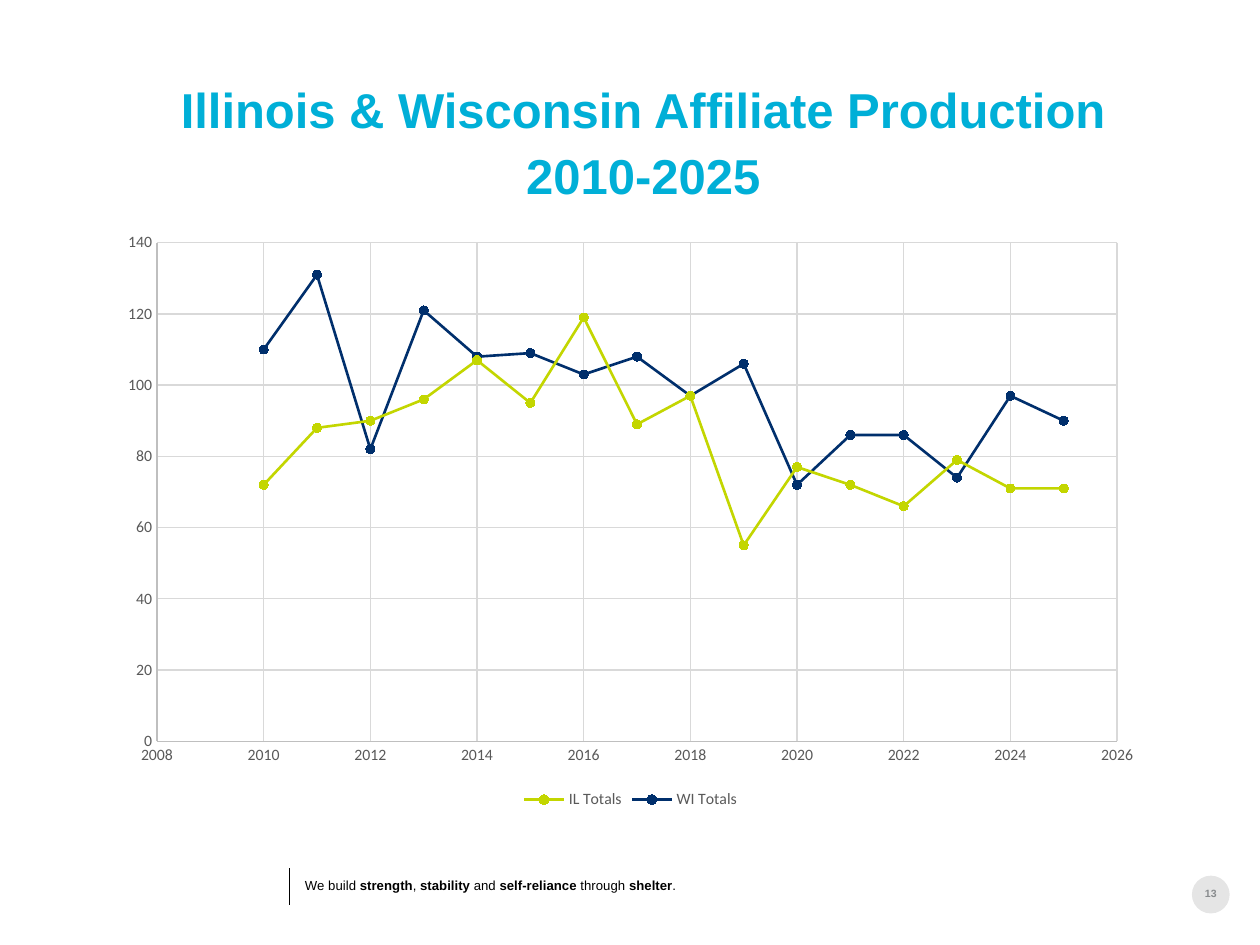
"""Build the affiliate production slide with its scatter chart."""
from lxml import etree
from pptx import Presentation
from pptx.chart.data import XyChartData
from pptx.dml.color import RGBColor
from pptx.enum.chart import XL_CHART_TYPE, XL_LEGEND_POSITION, XL_MARKER_STYLE, XL_TICK_MARK
from pptx.enum.shapes import MSO_CONNECTOR, MSO_SHAPE
from pptx.enum.text import MSO_ANCHOR, MSO_AUTO_SIZE, PP_ALIGN
from pptx.oxml.ns import qn
from pptx.util import Inches, Pt

SCATTER = XL_CHART_TYPE.XY_SCATTER_LINES
BOTTOM = XL_LEGEND_POSITION.BOTTOM
CIRCLE = XL_MARKER_STYLE.CIRCLE
NO_TICK = XL_TICK_MARK.NONE
STRAIGHT = MSO_CONNECTOR.STRAIGHT
OVAL = MSO_SHAPE.OVAL
TOP = MSO_ANCHOR.TOP
NO_FIT = MSO_AUTO_SIZE.NONE
CENTER, LEFT = PP_ALIGN.CENTER, PP_ALIGN.LEFT

BLACK = RGBColor(0x00, 0x00, 0x00)
GRAY = RGBColor(0x88, 0x8B, 0x8D)
LABEL_GRAY = RGBColor(0x59, 0x59, 0x59)
AXIS_GRAY = RGBColor(0xBF, 0xBF, 0xBF)
GRID_GRAY = RGBColor(0xD9, 0xD9, 0xD9)
CYAN = RGBColor(0x00, 0xAF, 0xD7)
LIME = RGBColor(0xC3, 0xD6, 0x00)
NAVY = RGBColor(0x00, 0x2F, 0x6C)

YEARS = range(2010, 2026)
TOTALS = {
    "IL Totals": (LIME, [72, 88, 90, 96, 107, 95, 119, 89, 97, 55, 77, 72, 66, 79, 71, 71]),
    "WI Totals": (NAVY, [110, 131, 82, 121, 108, 109, 103, 108, 97, 106, 72, 86, 86, 74, 97, 90]),
}
MOTTO = [("We build ", False), ("strength", True), (", ", False), ("stability", True),
         (" and ", False), ("self-reliance", True), (" through ", False),
         ("shelter", True), (".", False)]


class SlideBuilder:
    """Hold the style and current slide, placing elements on a 100 by 75 grid."""

    text_font = "Arial"
    chart_font = "Calibri"
    cell = Inches(0.1)

    def __init__(self, presentation):
        self.slide = presentation.slides.add_slide(presentation.slide_layouts[5])

    def grid(self, *lengths):
        return [round(length * self.cell) for length in lengths]

    def style_font(self, font, name, size, color, bold=False):
        font.name, font.size, font.bold = name, Pt(size), bold
        font.color.rgb = color

    def style_line(self, line, color, width):
        line.color.rgb = color
        line.width = Pt(width)

    def prepare_frame(self, text_frame):
        text_frame.auto_size = NO_FIT
        text_frame.word_wrap = True
        text_frame.vertical_anchor = TOP
        text_frame.margin_left = text_frame.margin_right = 0
        text_frame.margin_top = text_frame.margin_bottom = 0

    def title(self, text, area):
        title = self.slide.shapes.title
        title.left, title.top, title.width, title.height = self.grid(*area)
        self.prepare_frame(title.text_frame)
        title.text_frame.text = text
        for index, paragraph in enumerate(title.text_frame.paragraphs):
            paragraph.alignment = CENTER
            paragraph.line_spacing = 0.9
            paragraph.space_before = Pt(7.5 if index else 0)
            for run in paragraph.runs:
                self.style_font(run.font, self.text_font, 28, CYAN, True)

    def text(self, pieces, area, size, color, alignment=LEFT, spacing=1.0):
        text_frame = self.slide.shapes.add_textbox(*self.grid(*area)).text_frame
        self.prepare_frame(text_frame)
        paragraph = text_frame.paragraphs[0]
        paragraph.alignment = alignment
        paragraph.line_spacing = spacing
        for words, bold in pieces:
            run = paragraph.add_run()
            run.text = words
            self.style_font(run.font, self.text_font, size, color, bold)

    def disc(self, area, color, opacity):
        shape = self.slide.shapes.add_shape(OVAL, *self.grid(*area))
        shape.shadow.inherit = False
        shape.line.fill.background()
        shape.fill.solid()
        shape.fill.fore_color.rgb = color
        for element in shape.fill._xPr.iter(qn("a:srgbClr")):
            etree.SubElement(element, qn("a:alpha"), val=str(opacity * 1000))

    def rule(self, ends, color, width):
        connector = self.slide.shapes.add_connector(STRAIGHT, *self.grid(*ends))
        self.style_line(connector.line, color, width)
        etree.SubElement(connector._element.spPr, qn("a:effectLst"))

    def axis(self, axis, low, high, step):
        axis.minimum_scale, axis.maximum_scale, axis.major_unit = low, high, step
        axis.major_tick_mark = axis.minor_tick_mark = NO_TICK
        axis.has_major_gridlines = True
        self.style_line(axis.major_gridlines.format.line, GRID_GRAY, 0.75)
        self.style_line(axis.format.line, AXIS_GRAY, 0.75)
        self.style_font(axis.tick_labels.font, self.chart_font, 9, LABEL_GRAY)

    def chart(self, totals, area):
        data = XyChartData()
        for name, (_, values) in totals.items():
            series = data.add_series(name)
            for year, value in zip(YEARS, values):
                series.add_data_point(year, value)
        chart = self.slide.shapes.add_chart(SCATTER, *self.grid(*area), data).chart
        self.style_font(chart.font, self.chart_font, 10, BLACK)
        chart.has_title = False
        chart.has_legend = True
        chart.legend.position = BOTTOM
        chart.legend.include_in_layout = False
        self.style_font(chart.legend.font, self.chart_font, 9, LABEL_GRAY)
        self.axis(chart.category_axis, 2008, 2026, 2)
        self.axis(chart.value_axis, 0, 140, 20)
        plot = chart.plots[0]
        plot.vary_by_categories = False
        for series, (color, _) in zip(plot.series, totals.values()):
            series.smooth = False
            self.style_line(series.format.line, color, 1.5)
            series.marker.style = CIRCLE
            series.marker.size = 5
            series.marker.format.fill.solid()
            series.marker.format.fill.fore_color.rgb = color
            self.style_line(series.marker.format.line, color, 0.75)


def main():
    presentation = Presentation()
    presentation.slide_width, presentation.slide_height = Inches(10), Inches(7.5)
    builder = SlideBuilder(presentation)
    builder.disc((94.6, 69.5, 3, 3), BLACK, 10)
    builder.text([("13", True)], (94.8, 70.4, 2.6, 1.1), 6, GRAY, CENTER)
    builder.rule((23, 68.9, 23, 71.8), BLACK, 0.5)
    builder.text(MOTTO, (24.2, 69.9, 37.8, 1), 7.5, BLACK, spacing=0.8)
    builder.title("Illinois & Wisconsin Affiliate Production\n2010-2025", (7.1, 6.8, 87.9, 10.8))
    builder.chart(TOTALS, (8.5, 17.6, 83.1, 47))
    presentation.save("out.pptx")


if __name__ == "__main__":
    main()
